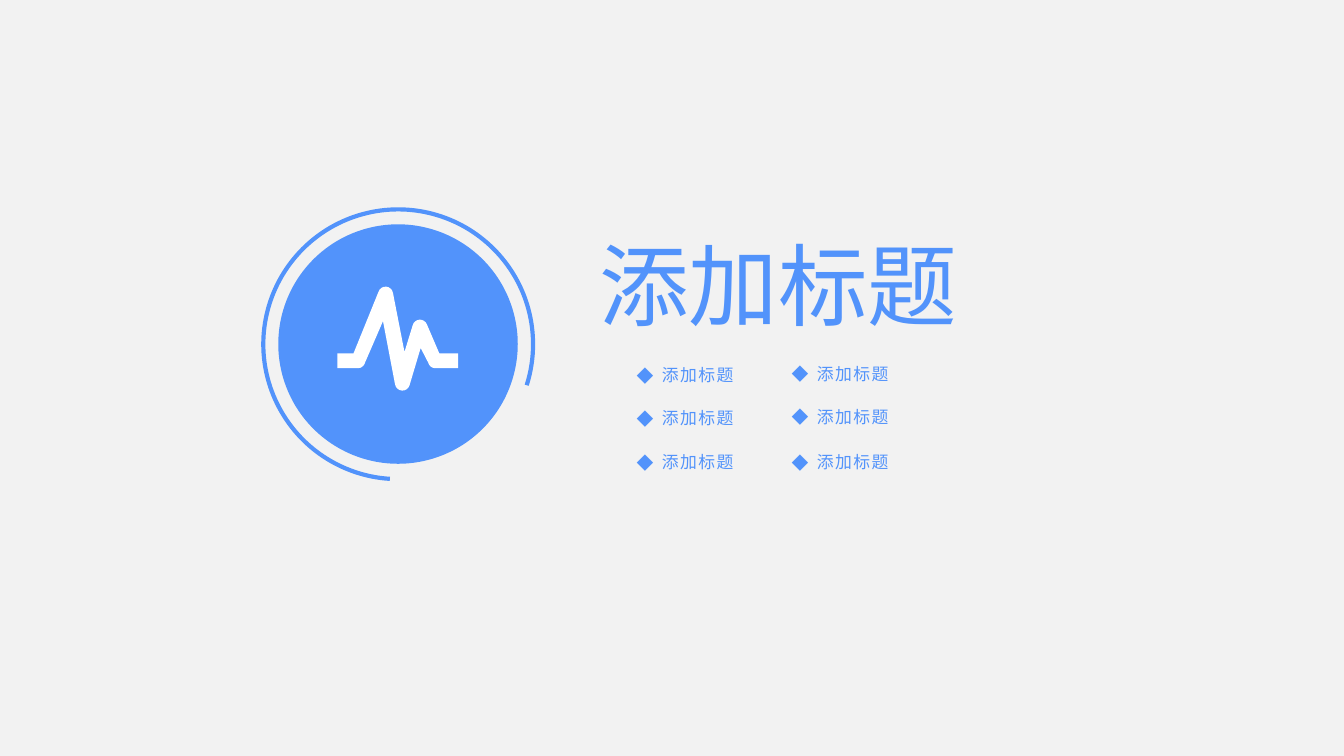
from math import cos, radians, sin
from lxml.etree import SubElement
from pptx import Presentation
from pptx.dml.color import RGBColor
from pptx.enum.shapes import MSO_SHAPE as Preset
from pptx.enum.text import MSO_AUTO_SIZE as AutoSize, PP_ALIGN as Align
from pptx.oxml.ns import qn
from pptx.util import Pt

COLORS = {"background": "F2F2F2", "blue": "5293FB", "white": "FFFFFF"}
COLORS = {name: RGBColor.from_string(value) for name, value in COLORS.items()}
FONT = "Noto Sans CJK SC"

deck = Presentation()
deck.slide_width, deck.slide_height = Pt(720), Pt(405)
page = deck.slides.add_slide(deck.slide_layouts[6])
page.background.fill.solid()
page.background.fill.fore_color.rgb = COLORS["background"]


def add_text(left, top, width, height, text, size):
    box = page.shapes.add_textbox(Pt(left), Pt(top), Pt(width), Pt(height))
    box.text_frame.word_wrap = True
    box.text_frame.auto_size = AutoSize.SHAPE_TO_FIT_TEXT
    para = box.text_frame.paragraphs[0]
    span = para.add_run()
    span.text = text
    for name, value in {"size": Pt(size), "name": FONT}.items():
        setattr(span.font, name, value)
    span.font.color.rgb = COLORS["blue"]
    SubElement(span.font._element, qn("a:ea"), typeface=FONT)
    return para, span


def bend(x, y, start, end, radius=4, steps=8):
    """Points of a rounded corner, from one angle to another."""
    angles = [radians(start + (end - start) * i / steps) for i in range(steps + 1)]
    return [(x + radius * cos(a), y + radius * sin(a)) for a in angles]


# Open ring
ring = page.shapes.add_shape(Preset.ARC, Pt(141.1), Pt(112.2), Pt(144.5), Pt(144.5))
ring.shadow.inherit = False
ring.adjustments[0], ring.adjustments[1] = 56.125, 10.604
ring.fill.background()
ring.line.color.rgb = COLORS["blue"]
ring.line.width = Pt(2.25)

# Disc
disc = page.shapes.add_shape(
    Preset.FLOWCHART_CONNECTOR, Pt(149.1), Pt(120.2), Pt(128.3), Pt(128.3))

# Pulse icon, drawn in hundredths of a point
outline = [
    (235.4, 189.4),
    *bend(225, 175.3, -20, -165),
    (216.7, 188.6),
    *bend(206.6, 157.6, -10, -160),
    (189.4, 189.4), (180.7, 189.4), (180.7, 197.3),
    *bend(191.7, 193.3, 90, 15),
    (205.2, 172.1),
    *bend(215.6, 205.3, 170, 15),
    (225.4, 186.5),
    *bend(233.3, 193.3, 165, 90),
    (245.5, 197.3), (245.5, 189.4),
]
outline = [(x * 100, y * 100) for x, y in outline]
builder = page.shapes.build_freeform(*outline[0], scale=Pt(0.01))
builder.add_line_segments(outline[1:], close=True)
pulse = builder.convert_to_shape()

for shape, color in ((disc, "blue"), (pulse, "white")):
    shape.shadow.inherit = False
    shape.fill.solid()
    shape.fill.fore_color.rgb = COLORS[color]
    shape.line.fill.background()

# Title
title, _ = add_text(262.8, 119.5, 308.2, 65.5, "添加标题", 48)
title.alignment = Align.CENTER

# Bullet items: two columns of three rows
columns = {334: (186.5, 209.5, 233.3), 417: (185.8, 208.8, 233.3)}
for left, tops in columns.items():
    for top in tops:
        para, span = add_text(left, top, 80, 21.6, "添加标题", 9)
        para.line_spacing = 1.5
        span.font._element.set("spc", "80")
        props = para._p.get_or_add_pPr()
        props.set("marL", str(Pt(13.5)))
        props.set("indent", str(Pt(-13.5)))
        SubElement(props, qn("a:buFont"), typeface=FONT)
        SubElement(props, qn("a:buChar"), char="◆")

deck.save("out.pptx")
